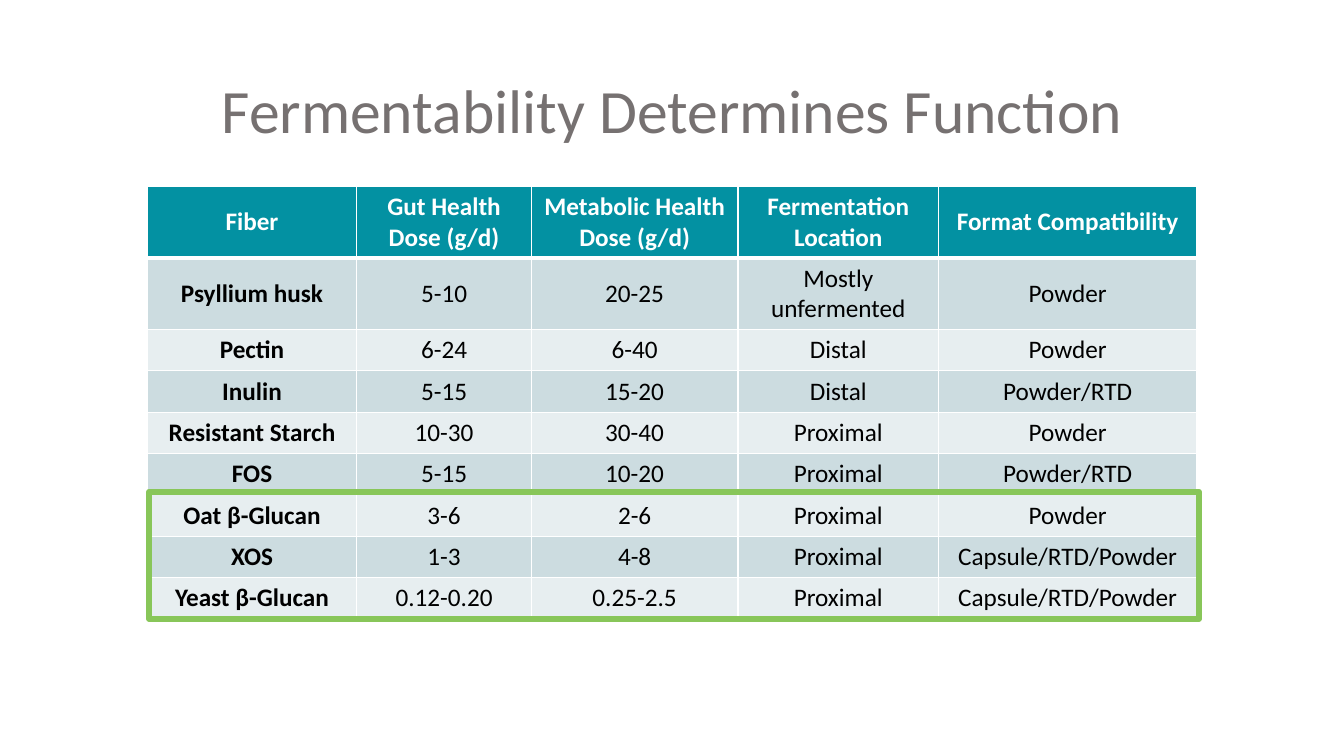
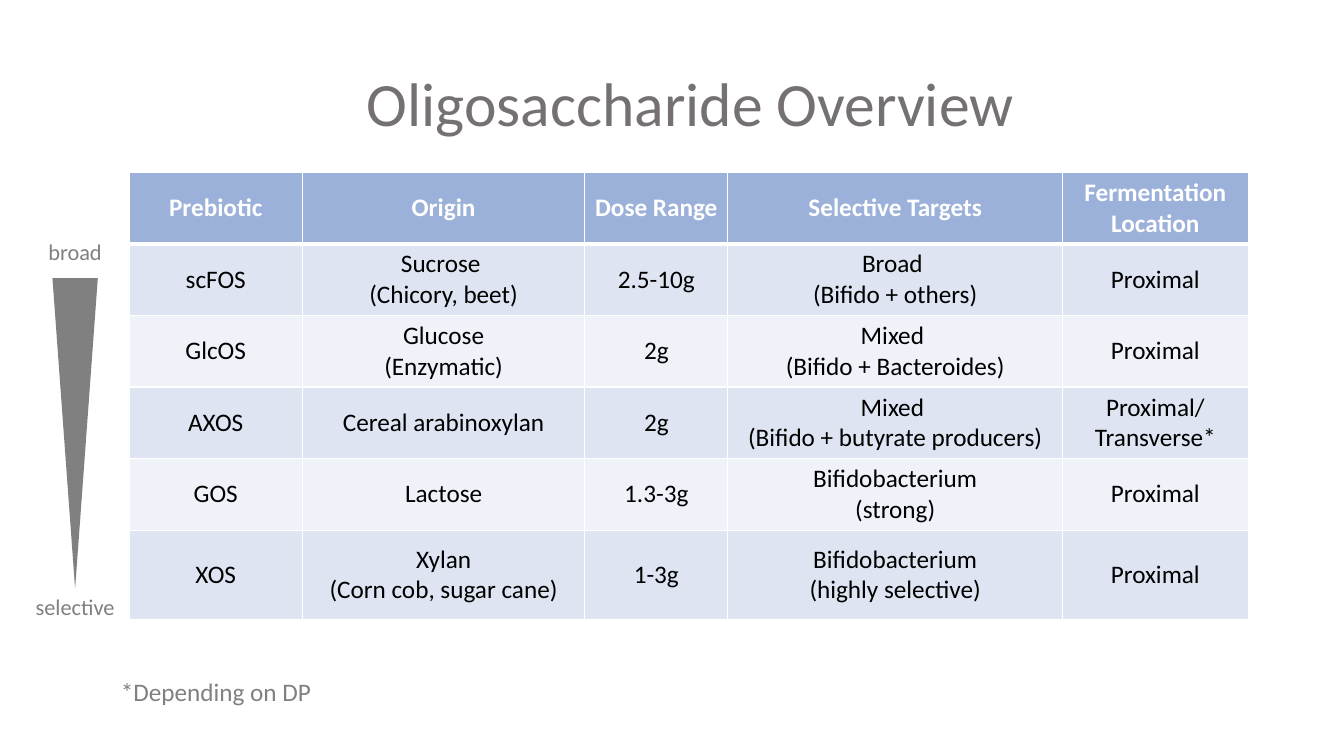
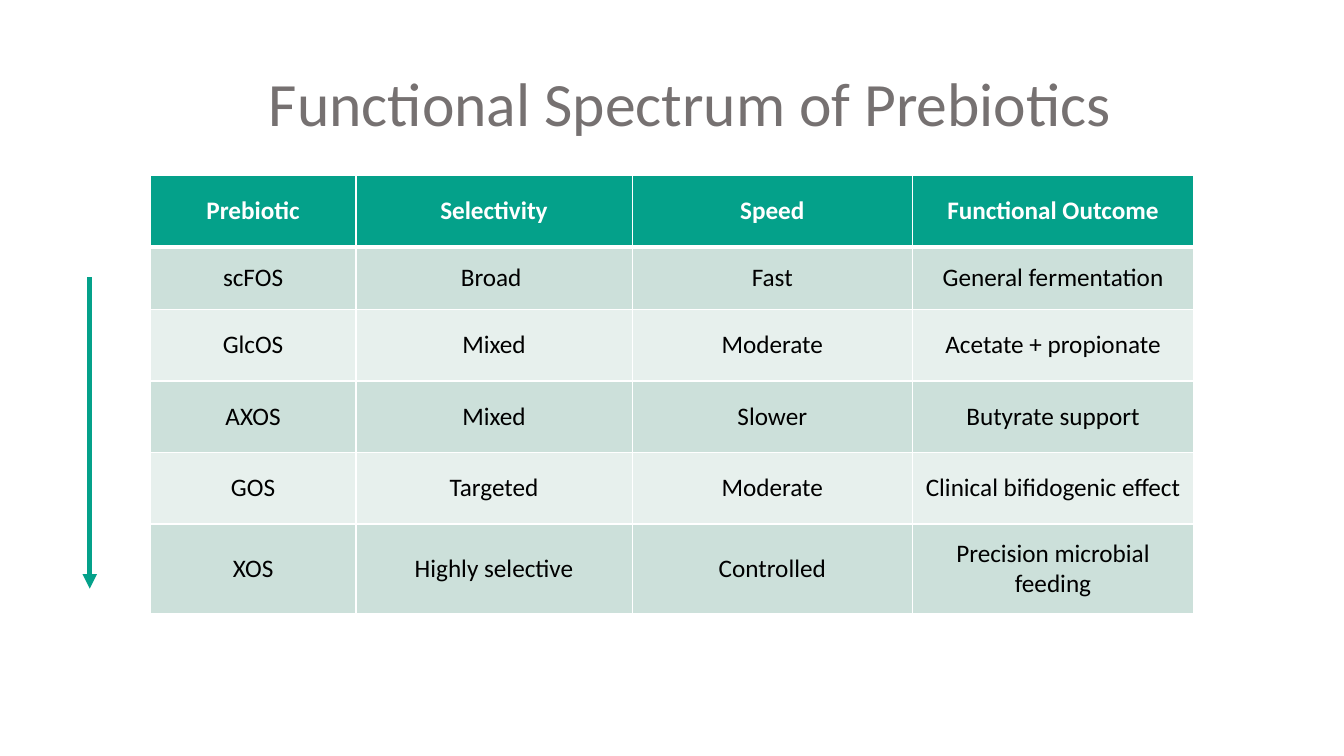
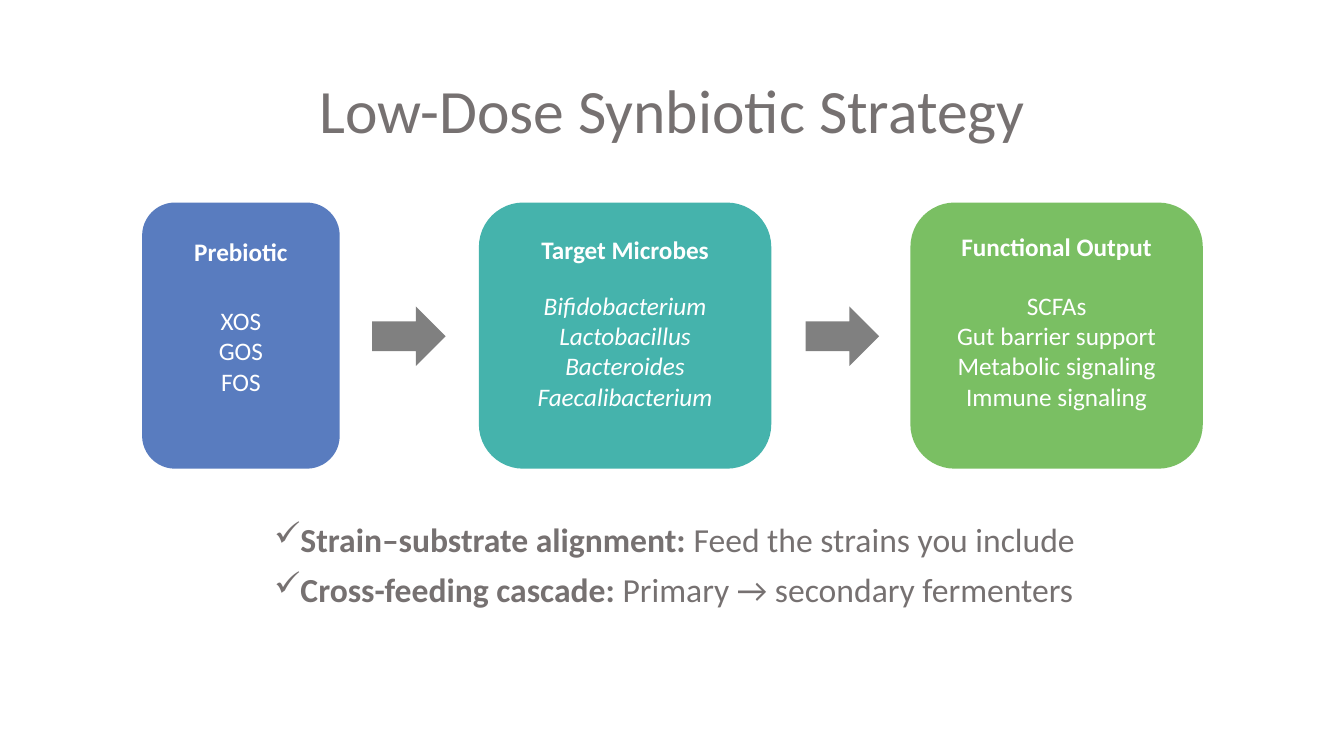
from lxml import etree
from pptx import Presentation
from pptx.dml.color import RGBColor
from pptx.enum.shapes import MSO_CONNECTOR, MSO_SHAPE
from pptx.enum.text import MSO_ANCHOR, PP_ALIGN
from pptx.oxml.ns import qn
from pptx.util import Inches, Pt

FONT = "Calibri"
WHITE, BLACK, SLATE, GRAY = "FFFFFF", "000000", "767171", "808080"
TEAL, GREEN, LIME = "0391A2", "04A18A", "88C659"
HIGH, LOW = (0.92, 0.4, 11.5, 1.45), (1.1, 0.41, 11.5, 1.29)


def rgb(code):
    return RGBColor.from_string(code)


def inches(box):
    return [Inches(v) for v in box]


def style(par, size, color, bold=False, italic=False, align=PP_ALIGN.CENTER):
    par.alignment = align
    for font in [par.font] + [run.font for run in par.runs]:
        font.name, font.size = FONT, Pt(size)
        font.bold, font.italic = bold, italic
        font.color.rgb = rgb(color)


def label(slide, box, words, size, color, bold=False, align=PP_ALIGN.CENTER):
    frame = slide.shapes.add_textbox(*inches(box)).text_frame
    frame.word_wrap = False
    frame.text = words
    style(frame.paragraphs[0], size, color, bold, align=align)
    return frame


def start(deck, words, box):
    """Add a blank slide with its title."""
    slide = deck.slides.add_slide(deck.slide_layouts[6])
    frame = label(slide, box, words, 44, SLATE)
    frame.word_wrap = True
    frame.vertical_anchor = MSO_ANCHOR.MIDDLE
    frame.paragraphs[0].line_spacing = 0.9
    return slide


def shape(slide, kind, box, fill=None, line=None, width=1):
    item = slide.shapes.add_shape(kind, *inches(box))
    item.shadow.inherit = False
    if fill:
        item.fill.solid()
        item.fill.fore_color.rgb = rgb(fill)
    else:
        item.fill.background()
    if line:
        item.line.color.rgb = rgb(line)
        item.line.width = Pt(width)
    else:
        item.line.fill.background()
    return item


def border(cell, side, width):
    edge = etree.SubElement(cell._tc.get_or_add_tcPr(), qn(f"a:ln{side}"), w=str(Pt(width)))
    fill = etree.SubElement(edge, qn("a:solidFill"))
    etree.SubElement(fill, qn("a:srgbClr"), val=WHITE)


def table(slide, left, top, cols, rows, fills, data, lead=False):
    """Draw a banded table; fills are head, odd and even, lead bolds column one."""
    box = inches((left, top, sum(cols), sum(rows)))
    grid = slide.shapes.add_table(len(rows), len(cols), *box).table
    for col, width in zip(grid.columns, cols):
        col.width = Inches(width)
    for r, (height, line) in enumerate(zip(rows, data)):
        grid.rows[r].height = Inches(height)
        head = r == 0
        fill = fills[0] if head else fills[2 - r % 2]
        for c, words in enumerate(line):
            cell = grid.cell(r, c)
            for side in "LRTB":
                thick = side + str(r) in ("B0", "T1")
                border(cell, side, 3 if thick else 1)
            cell.fill.solid()
            cell.fill.fore_color.rgb = rgb(fill)
            cell.vertical_anchor = MSO_ANCHOR.MIDDLE
            cell.text = words
            for par in cell.text_frame.paragraphs:
                style(par, 18, WHITE if head else BLACK, head or (lead and c == 0))


def fibers(deck):
    slide = start(deck, "Fermentability Determines Function", HIGH)
    left, top = 1.46, 1.85
    cols = [2.08, 1.73, 2.05, 1.99, 2.56]
    rows = [0.71, 0.71] + [0.41] * 7
    data = [
        ("Fiber", "Gut Health Dose (g/d)", "Metabolic Health Dose (g/d)",
         "Fermentation Location", "Format Compatibility"),
        ("Psyllium husk", "5-10", "20-25", "Mostly unfermented", "Powder"),
        ("Pectin", "6-24", "6-40", "Distal", "Powder"),
        ("Inulin", "5-15", "15-20", "Distal", "Powder/RTD"),
        ("Resistant Starch", "10-30", "30-40", "Proximal", "Powder"),
        ("FOS", "5-15", "10-20", "Proximal", "Powder/RTD"),
        ("Oat β-Glucan", "3-6", "2-6", "Proximal", "Powder"),
        ("XOS", "1-3", "4-8", "Proximal", "Capsule/RTD/Powder"),
        ("Yeast β-Glucan", "0.12-0.20", "0.25-2.5", "Proximal", "Capsule/RTD/Powder"),
    ]
    table(slide, left, top, cols, rows, (TEAL, "CCDCE0", "E7EEF0"), data, lead=True)
    frame = (left + 0.02, top + 3.03, sum(cols), 1.26)
    shape(slide, MSO_SHAPE.RECTANGLE, frame, line=LIME, width=4.5)


def wedge(slide, left, top, height):
    """Show a range from broad to selective."""
    width = 0.45
    shape(slide, MSO_SHAPE.FLOWCHART_MERGE, (left, top, width, height), GRAY)
    mid = left + width / 2
    for words, y in (("broad", top - 0.45), ("selective", top + height)):
        label(slide, (mid - 0.5, y, 1, 0.37), words, 16, GRAY)


def sugars(deck):
    slide = start(deck, "Oligosaccharide Overview", LOW)
    data = [
        ("Prebiotic", "Origin", "Dose Range", "Selective Targets", "Fermentation Location"),
        ("scFOS", "Sucrose \n(Chicory, beet)", "2.5-10g", "Broad \n(Bifido + others)", "Proximal"),
        ("GlcOS", "Glucose\n(Enzymatic)", "2g", "Mixed \n(Bifido + Bacteroides)", "Proximal"),
        ("AXOS", "Cereal arabinoxylan", "2g", "Mixed \n(Bifido + butyrate producers)",
         "Proximal/ Transverse*"),
        ("GOS", "Lactose", "1.3-3g", "Bifidobacterium\n(strong)", "Proximal"),
        ("XOS", "Xylan\n(Corn cob, sugar cane)", "1-3g",
         "Bifidobacterium\n(highly selective)", "Proximal"),
    ]
    table(slide, 1.28, 1.71, [1.72, 2.8, 1.42, 3.32, 1.84], [0.71] * 5 + [0.89],
          ("9CB1D9", "DEE4F1", "EFF2F8"), data)
    label(slide, (1.1, 6.66, 2.11, 0.4), "*Depending on DP", 18, GRAY, align=PP_ALIGN.LEFT)
    wedge(slide, 0.52, 2.76, 3.08)


def arrow(slide, x, top, bottom):
    line = slide.shapes.add_connector(MSO_CONNECTOR.STRAIGHT, *inches((x, top, x, bottom)))
    line.line.color.rgb = rgb(GREEN)
    line.line.width = Pt(3.5)
    etree.SubElement(line.line._get_or_add_ln(), qn("a:tailEnd"), type="triangle")
    etree.SubElement(line._element.spPr, qn("a:effectLst"))


def spectrum(deck):
    slide = start(deck, "Functional Spectrum of Prebiotics", LOW)
    data = [
        ("Prebiotic", "Selectivity", "Speed", "Functional Outcome"),
        ("scFOS", "Broad ", "Fast", "General fermentation"),
        ("GlcOS", "Mixed", "Moderate", "Acetate + propionate"),
        ("AXOS", "Mixed", "Slower", "Butyrate support"),
        ("GOS", "Targeted", "Moderate", "Clinical bifidogenic effect"),
        ("XOS", "Highly selective", "Controlled", "Precision microbial feeding"),
    ]
    table(slide, 1.49, 1.74, [2.04, 2.74, 2.78, 2.79], [0.71, 0.62] + [0.71] * 3 + [0.89],
          (GREEN, "CCE0DA", "E7F0ED"), data)
    arrow(slide, 0.89, 2.75, 5.84)


def card(slide, box, fill, head, drop, items, italic=False):
    """Draw a rounded card; drop is the gap above its heading."""
    left, top, width, _ = box
    frame = shape(slide, MSO_SHAPE.ROUNDED_RECTANGLE, box, fill).text_frame
    frame.vertical_anchor = MSO_ANCHOR.MIDDLE
    frame.margin_top = Inches(0.35)
    frame.text = "\n".join(items)
    for par in frame.paragraphs:
        style(par, 18, WHITE, italic=italic)
    label(slide, (left, top + drop, width, 0.4), head, 18, WHITE, bold=True)


def checks(slide, box, items):
    frame = slide.shapes.add_textbox(*inches(box)).text_frame
    frame.word_wrap = True
    for i, (lead, rest) in enumerate(items):
        par = frame.paragraphs[0] if i == 0 else frame.add_paragraph()
        par.line_spacing = 0.9
        if i:
            par.space_before = Pt(10)
        props = par._p.get_or_add_pPr()
        props.set("marL", str(Inches(0.25)))
        props.set("indent", str(-Inches(0.25)))
        etree.SubElement(props, qn("a:buChar"), char="✓")
        for words in (lead, rest):
            par.add_run().text = words
        style(par, 24, SLATE, align=PP_ALIGN.LEFT)
        par.runs[0].font.bold = True


def strategy(deck):
    slide = start(deck, "Low-Dose Synbiotic Strategy", HIGH)
    top, height = 2.01, 2.64
    cards = [
        (1.41, 1.96, "597CBF", "Prebiotic", 0.29, ("XOS", "GOS", "FOS"), False),
        (4.75, 2.9, "45B3AC", "Target Microbes", 0.27,
         ("Bifidobacterium", "Lactobacillus", "Bacteroides", "Faecalibacterium"), True),
        (9.03, 2.9, "7ABF63", "Functional Output", 0.24,
         ("SCFAs", "Gut barrier support", "Metabolic signaling", "Immune signaling"), False),
    ]
    for left, width, *rest in cards:
        card(slide, (left, top, width, height), *rest)
    for left in (3.69, 7.99):
        shape(slide, MSO_SHAPE.RIGHT_ARROW, (left, top + 1.03, 0.73, 0.59), GRAY)
    checks(slide, (2.62, 5.14, 8.83, 1.45), [
        ("Strain–substrate alignment: ", "Feed the strains you include"),
        ("Cross-feeding cascade: ", "Primary → secondary fermenters"),
    ])


def main():
    deck = Presentation()
    deck.slide_width, deck.slide_height = Inches(13.33), Inches(7.5)
    for build in (fibers, sugars, spectrum, strategy):
        build(deck)
    deck.save("out.pptx")


if __name__ == "__main__":
    main()
